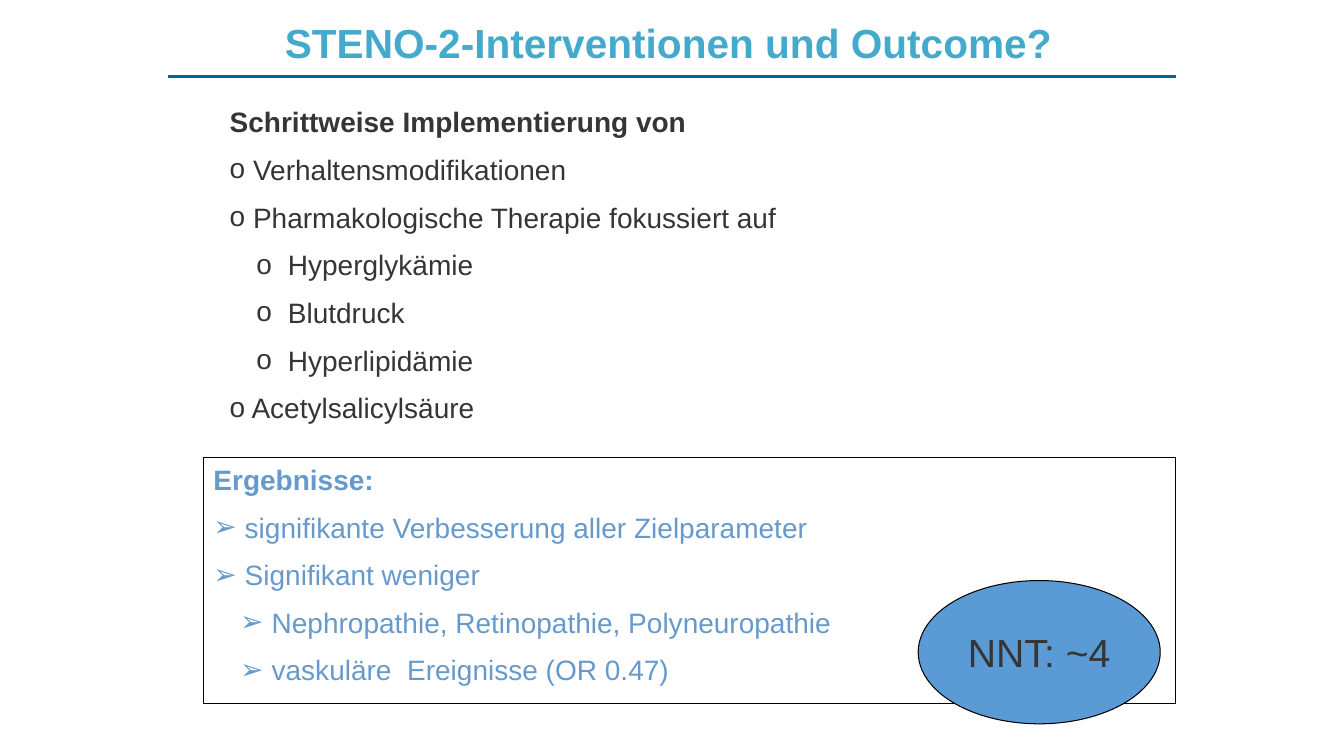
from lxml import etree
from pptx import Presentation
from pptx import util as u
from pptx.dml.color import RGBColor
from pptx.enum import shapes, text
from pptx.oxml.ns import qn

FONT = "Arial"
DARK, RESULT_BLUE, TITLE_BLUE = "353535", "6699CC", "44AACC"
RULE_BLUE, OVAL_BLUE, BLACK = "006699", "5B9BD5", "000000"

INTERVENTIONS = [
    (0, " Verhaltensmodifikationen"),
    (0, " Pharmakologische Therapie fokussiert auf"),
    (1, " Hyperglykämie"),
    (1, " Blutdruck"),
    (1, " Hyperlipidämie"),
    (0, " Acetylsalicylsäure"),
]
RESULTS = [
    (0, " signifikante Verbesserung aller Zielparameter"),
    (0, " Signifikant weniger"),
    (1, " Nephropathie, Retinopathie, Polyneuropathie"),
    (1, " vaskuläre  Ereignisse (OR 0.47)"),
]


def colour(hex_string):
    return RGBColor.from_string(hex_string)


def cm_box(left, top, width, height):
    return [u.Cm(length) for length in (left, top, width, height)]


def style(paragraph, size, hex_string, bold=False):
    for run in paragraph.runs:
        run.font.name = FONT
        run.font.size = u.Pt(size)
        run.font.bold = bold
        run.font.color.rgb = colour(hex_string)


def set_bullet(paragraph, mark, level):
    """Bullet a paragraph; only the second level hangs its text."""
    paragraph.level = level
    properties = paragraph._p.get_or_add_pPr()
    properties.set("marL", str(u.Cm(1.27 * level)))
    properties.set("indent", str(u.Cm(-0.6 * level)))
    etree.SubElement(properties, qn("a:buFont"), typeface=FONT)
    etree.SubElement(properties, qn("a:buChar"), char=mark)


def fill_list(frame, heading, items, mark, hex_string):
    frame.word_wrap = True
    frame.vertical_anchor = text.MSO_ANCHOR.TOP
    first = frame.paragraphs[0]
    first.text = heading
    first.alignment = text.PP_ALIGN.LEFT
    style(first, 20, hex_string, bold=True)
    for level, wording in items:
        item = frame.add_paragraph()
        item.text = wording
        item.alignment = text.PP_ALIGN.LEFT
        item.space_before = u.Pt(10)
        set_bullet(item, mark, level)
        style(item, 20, hex_string)


def add_outlined(slide, kind, box, fill=None):
    shape = slide.shapes.add_shape(kind, *cm_box(*box))
    shape.shadow.inherit = False
    if fill:
        shape.fill.solid()
        shape.fill.fore_color.rgb = colour(fill)
    else:
        shape.fill.background()
    shape.line.color.rgb = colour(BLACK)
    shape.line.width = u.Pt(0.75)
    return shape


def add_title(slide, wording):
    frame = slide.shapes.add_textbox(*cm_box(6.93, 0.33, 20.02, 1.47)).text_frame
    frame.word_wrap = True
    frame.text = wording
    style(frame.paragraphs[0], 29, TITLE_BLUE, bold=True)


def add_title_rule(slide):
    rule = slide.shapes.add_connector(
        shapes.MSO_CONNECTOR.STRAIGHT, *cm_box(4.24, 1.93, 29.64, 1.93))
    rule.line.color.rgb = colour(RULE_BLUE)
    rule.line.width = u.Pt(2.25)
    etree.SubElement(rule._element.spPr, qn("a:effectLst"))


def add_nnt_oval(slide, wording):
    oval = add_outlined(slide, shapes.MSO_SHAPE.OVAL,
                        (23.14, 14.63, 6.1, 3.61), OVAL_BLUE)
    frame = oval.text_frame
    frame.word_wrap = False
    frame.vertical_anchor = text.MSO_ANCHOR.MIDDLE
    frame.text = wording
    frame.paragraphs[0].alignment = text.PP_ALIGN.CENTER
    style(frame.paragraphs[0], 28, DARK)


def main():
    deck = Presentation()
    deck.slide_width, deck.slide_height = u.Cm(33.87), u.Cm(19.05)
    slide = deck.slides.add_slide(deck.slide_layouts[6])

    interventions = slide.shapes.add_textbox(*cm_box(5.54, 2.52, 21.79, 8.71))
    fill_list(interventions.text_frame, "Schrittweise Implementierung von",
              INTERVENTIONS, "o", DARK)
    results = add_outlined(slide, shapes.MSO_SHAPE.RECTANGLE,
                           (5.13, 11.53, 24.5, 6.2))
    fill_list(results.text_frame, "Ergebnisse:", RESULTS, "➢", RESULT_BLUE)
    add_nnt_oval(slide, "NNT: ~4")
    add_title(slide, "STENO-2-Interventionen und Outcome?")
    add_title_rule(slide)

    deck.save("out.pptx")


if __name__ == "__main__":
    main()
